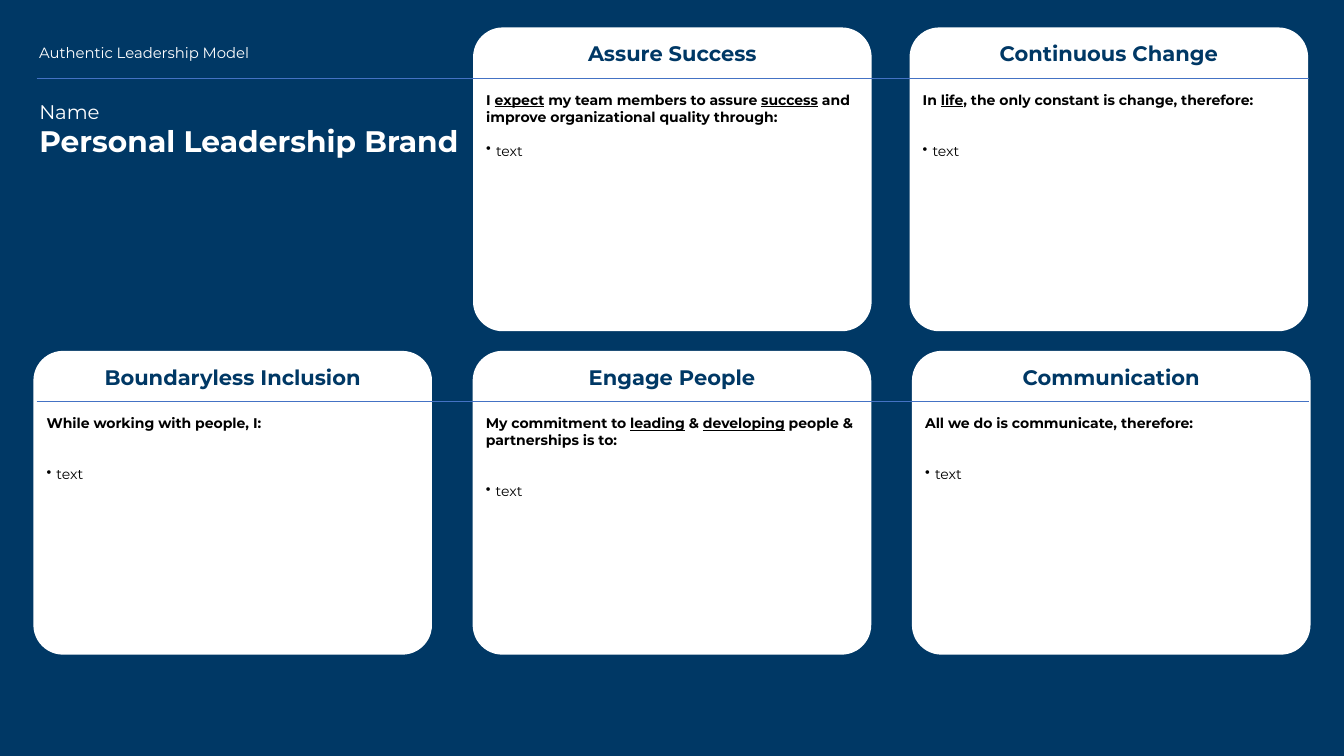
from dataclasses import dataclass

from lxml import etree
from pptx import Presentation
from pptx.dml.color import RGBColor
from pptx.enum.shapes import MSO_CONNECTOR, MSO_SHAPE
from pptx.enum.text import MSO_ANCHOR, MSO_AUTO_SIZE, PP_ALIGN
from pptx.oxml.ns import qn
from pptx.util import Cm, Pt

ROUNDED = MSO_SHAPE.ROUNDED_RECTANGLE
STRAIGHT = MSO_CONNECTOR.STRAIGHT
TOP = MSO_ANCHOR.TOP
NO_FIT = MSO_AUTO_SIZE.NONE
LEFT, CENTER = PP_ALIGN.LEFT, PP_ALIGN.CENTER
TITLE_ONLY = 5


@dataclass(frozen=True)
class Theme:
    font: str = "Montserrat"
    navy: RGBColor = RGBColor(0x00, 0x38, 0x65)
    white: RGBColor = RGBColor(0xFF, 0xFF, 0xFF)
    black: RGBColor = RGBColor(0x00, 0x00, 0x00)
    rule: RGBColor = RGBColor(0x44, 0x72, 0xC4)
    brand: float = 21.2
    name: float = 14.1
    model: float = 10.6
    heading: float = 15
    body: float = 10


class Board:
    card_width, card_height = 10.01, 7.62
    line_height = 1.22

    def __init__(self, s, theme):
        self.s, self.theme = s, theme
        s.background.fill.solid()
        s.background.fill.fore_color.rgb = theme.navy

    def frame(self, sp, inset):
        tf = sp.text_frame
        tf.word_wrap = True
        tf.auto_size = NO_FIT
        tf.vertical_anchor = TOP
        tf.margin_left = tf.margin_right = Cm(inset)
        tf.margin_top = tf.margin_bottom = Cm(inset)
        return tf

    def run(self, p, text, size, color, bold=False, underline=None):
        r = p.add_run()
        r.text = text
        r.font.name = self.theme.font
        r.font.size = Pt(size)
        r.font.color.rgb = color
        r.font.bold = bold
        r.font.underline = underline

    def paragraph(self, p, align=LEFT, before=0):
        p.alignment = align
        p.space_before = Pt(before)
        return p

    def bullet(self, p, indent):
        pPr = p._p.get_or_add_pPr()
        pPr.set("marL", str(indent))
        pPr.set("indent", str(-indent))
        etree.SubElement(pPr, qn("a:buChar")).set("char", "•")

    def title(self, name, brand, left, top, width, height):
        sp = self.s.shapes.title
        sp.left, sp.top, sp.width, sp.height = Cm(left), Cm(top), Cm(width), Cm(height)
        tf = self.frame(sp, 0.25)
        p = self.paragraph(tf.paragraphs[0])
        self.run(p, name, self.theme.name, self.theme.white)
        p = self.paragraph(tf.add_paragraph())
        self.run(p, brand, self.theme.brand, self.theme.white, bold=True)

    def label(self, text, left, top, width, height):
        sp = self.s.shapes.add_textbox(Cm(left), Cm(top), Cm(width), Cm(height))
        p = self.paragraph(self.frame(sp, 0.25).paragraphs[0])
        self.run(p, text, self.theme.model, self.theme.white)

    def card(self, left, top, heading, prompt, gap_lines):
        t = self.theme
        sp = self.s.shapes.add_shape(
            ROUNDED, Cm(left), Cm(top), Cm(self.card_width), Cm(self.card_height))
        sp.adjustments[0] = 0.096
        sp.shadow.inherit = False
        sp.fill.solid()
        sp.fill.fore_color.rgb = t.white
        sp.line.color.rgb = t.white
        sp.line.width = Pt(1)
        tf = self.frame(sp, 0.1)
        p = self.paragraph(tf.paragraphs[0], CENTER)
        self.run(p, heading, t.heading, t.navy, bold=True)
        p = self.paragraph(tf.add_paragraph(), before=t.heading * self.line_height)
        for text, underline in prompt:
            self.run(p, text, t.body, t.black, bold=True, underline=underline)
        p = tf.add_paragraph()
        self.bullet(p, Cm(0.25))
        self.paragraph(p, before=gap_lines * t.body * self.line_height)
        self.run(p, "text", t.body, t.black)

    def rule(self, left, right, y):
        line = self.s.shapes.add_connector(STRAIGHT, Cm(left), Cm(y), Cm(right), Cm(y))
        line.line.color.rgb = self.theme.rule
        line.line.width = Pt(0.5)
        etree.SubElement(line._element.spPr, qn("a:effectLst"))


ROWS = [
    (0.71, 11.94, 11, [
        ("Assure Success", [
            ("I ", False), ("expect", True), (" my team members to assure ", False),
            ("success", True),
            (" and improve organizational quality through:", False)], 1),
        ("Continuous Change", [
            ("In ", False), ("life", True),
            (", the only constant is change, therefore:", False)], 2),
    ]),
    (8.86, 0.86, 11.07, [
        ("Boundaryless Inclusion", [("While working with people, I:", False)], 2),
        ("Engage People", [
            ("My commitment to ", False), ("leading", True), (" & ", False),
            ("developing", True), (" people & partnerships is to:", False)], 2),
        ("Communication", [("All we do is communicate, therefore:", False)], 2),
    ]),
]


def main():
    prs = Presentation()
    prs.slide_width, prs.slide_height = Cm(33.87), Cm(19.05)
    s = prs.slides.add_slide(prs.slide_layouts[TITLE_ONLY])
    board = Board(s, Theme())
    board.title("Name", "Personal Leadership Brand", 0.74, 2.26, 11.15, 4.83)
    board.label("Authentic Leadership Model", 0.74, 0.84, 7.42, 1.42)
    for top, start, pitch, cards in ROWS:
        for col, (heading, prompt, gap_lines) in enumerate(cards):
            board.card(start + col * pitch, top, heading, prompt, gap_lines)
        board.rule(0.92, 32.98, top + 1.26)
    prs.save("out.pptx")


if __name__ == "__main__":
    main()
